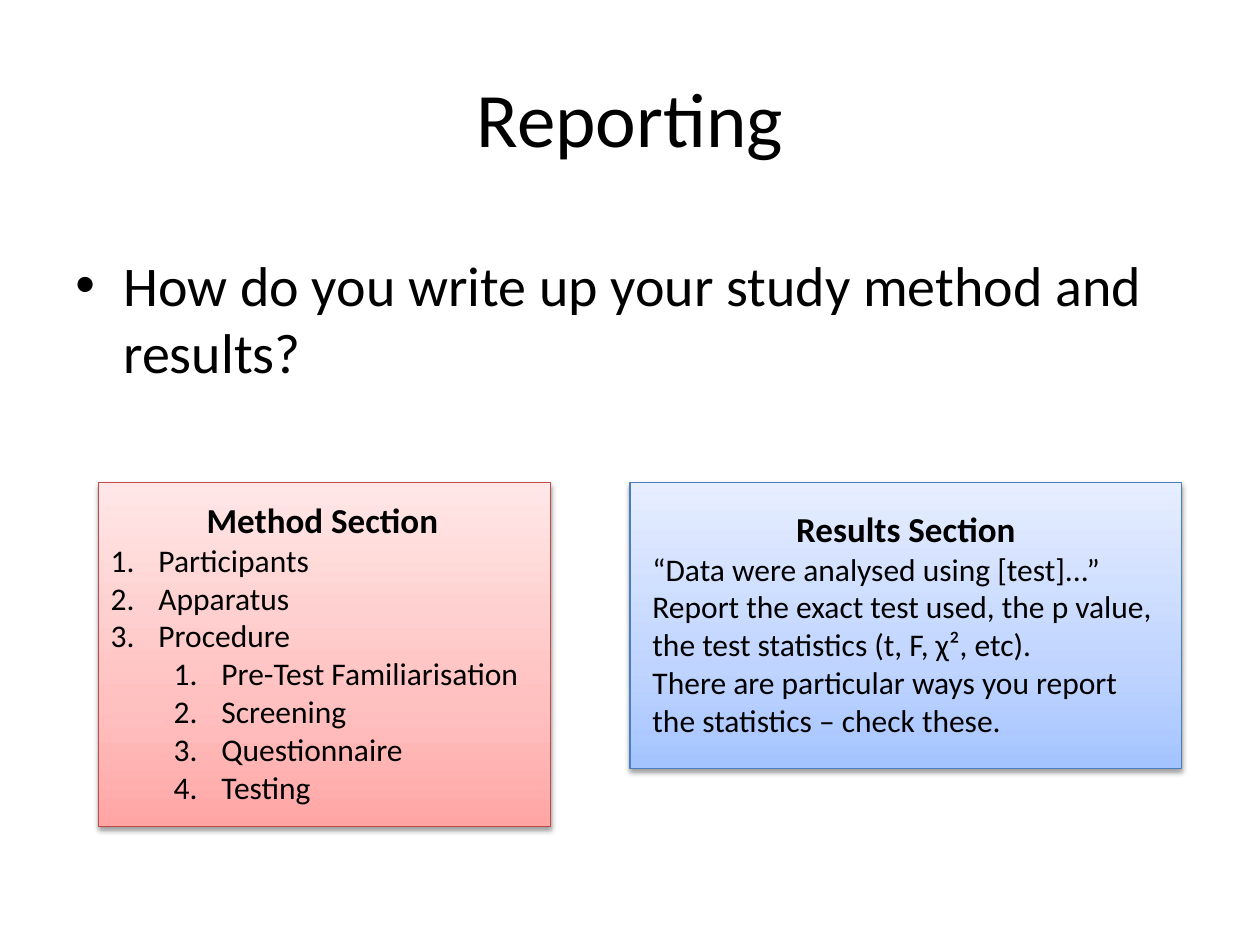
from dataclasses import dataclass

from lxml import etree
from pptx import Presentation
from pptx.dml.color import RGBColor
from pptx.enum.shapes import MSO_SHAPE
from pptx.enum.text import MSO_ANCHOR, PP_ALIGN
from pptx.oxml.ns import qn
from pptx.util import Inches, Pt

RECTANGLE = MSO_SHAPE.RECTANGLE
MIDDLE, TOP = MSO_ANCHOR.MIDDLE, MSO_ANCHOR.TOP
CENTER, LEFT = PP_ALIGN.CENTER, PP_ALIGN.LEFT

FONT = "Calibri"
BLACK = RGBColor(0x00, 0x00, 0x00)
BLUE_LINE = RGBColor(0x4B, 0x7E, 0xBC)
BLUE_STOPS = (RGBColor(0xA4, 0xC4, 0xFF), RGBColor(0xBF, 0xD4, 0xFF), RGBColor(0xE6, 0xEE, 0xFF))
RED_LINE = RGBColor(0xBF, 0x4C, 0x48)
RED_STOPS = (RGBColor(0xFF, 0xA6, 0xA5), RGBColor(0xFF, 0xC0, 0xBF), RGBColor(0xFF, 0xE7, 0xE7))
STOP_POSITIONS = (0, 35, 100)
HANGING = 0.38
LEVEL_STEP = 0.5


@dataclass(frozen=True)
class Box:
    left: float
    top: float
    width: float
    height: float

    def lengths(self) -> tuple:
        return tuple(Inches(v) for v in (self.left, self.top, self.width, self.height))


@dataclass(frozen=True)
class Line:
    text: str
    size: float = 18
    bold: bool = False
    align: PP_ALIGN = LEFT
    marker: str = ""  # a bullet character, or "1." for automatic numbers
    level: int = 0
    space_before: float = 0


@dataclass(frozen=True)
class Card:
    frame: Box
    text_box: Box
    stops: tuple[RGBColor, ...]
    outline: RGBColor
    lines: tuple[Line, ...]
    wrap: bool = True


def add_marker(paragraph, line: Line) -> None:
    """Give the paragraph a hanging bullet or number."""
    properties = paragraph._p.get_or_add_pPr()
    properties.set("marL", str(Inches(HANGING + LEVEL_STEP * line.level)))
    properties.set("indent", str(-Inches(HANGING)))
    if line.marker == "1.":
        etree.SubElement(properties, qn("a:buAutoNum"), type="arabicPeriod")
    else:
        etree.SubElement(properties, qn("a:buFont"), typeface="Arial")
        etree.SubElement(properties, qn("a:buChar"), char=line.marker)


def add_text(shapes, box: Box, lines: tuple[Line, ...], anchor=TOP, wrap: bool = True) -> None:
    frame = shapes.add_textbox(*box.lengths()).text_frame
    frame.word_wrap = wrap
    frame.vertical_anchor = anchor
    for index, line in enumerate(lines):
        paragraph = frame.add_paragraph() if index else frame.paragraphs[0]
        paragraph.alignment = line.align
        paragraph.level = line.level
        if line.space_before:
            paragraph.space_before = Pt(line.space_before)
        if line.marker:
            add_marker(paragraph, line)
        for part_index, part in enumerate(line.text.split("\n")):
            if part_index:
                paragraph.add_line_break()
            run = paragraph.add_run()
            run.text = part
            run.font.name = FONT
            run.font.size = Pt(line.size)
            run.font.bold = line.bold
            run.font.color.rgb = BLACK


def set_gradient(shape, stops: tuple[RGBColor, ...]) -> None:
    """Fill from the bottom edge up with the given colours."""
    shape.fill.gradient()
    shape.fill.gradient_angle = 90
    stop_list = shape._element.spPr.find(".//" + qn("a:gsLst"))
    for old_stop in list(stop_list):
        stop_list.remove(old_stop)
    for position, color in zip(STOP_POSITIONS, stops):
        stop = etree.SubElement(stop_list, qn("a:gs"), pos=str(position * 1000))
        etree.SubElement(stop, qn("a:srgbClr"), val=str(color))


def set_shadow(shape) -> None:
    """Cast a soft black shadow straight down."""
    shape.shadow.inherit = False
    effects = shape._element.spPr.find(qn("a:effectLst"))
    shadow = etree.SubElement(effects, qn("a:outerShdw"), blurRad=str(Pt(3.1)),
                              dist=str(Pt(1.6)), dir="5400000", rotWithShape="0")
    color = etree.SubElement(shadow, qn("a:srgbClr"), val=str(BLACK))
    etree.SubElement(color, qn("a:alpha"), val="38000")


def add_card(slide, card: Card) -> None:
    shapes = slide.shapes.add_group_shape().shapes
    panel = shapes.add_shape(RECTANGLE, *card.frame.lengths())
    set_gradient(panel, card.stops)
    panel.line.color.rgb = card.outline
    panel.line.width = Pt(0.75)
    set_shadow(panel)
    add_text(shapes, card.text_box, card.lines, wrap=card.wrap)


def heading(text: str) -> Line:
    return Line(text, size=20, bold=True, align=CENTER)


RESULTS = Card(
    Box(5, 3.83, 4.38, 2.27), Box(5.08, 3.98, 4.22, 1.95), BLUE_STOPS, BLUE_LINE,
    (
        heading("Results Section"),
        Line("“Data were analysed using [test]...”"),
        Line("Report the exact test used, the p value,\nthe test statistics (t, F, χ², etc)."),
        Line("There are particular ways you report \nthe statistics – check these."),
    ),
)
METHOD_STEPS = ("Participants", "Apparatus", "Procedure")
PROCEDURE_STEPS = ("Pre-Test Familiarisation", "Screening", "Questionnaire", "Testing")
METHOD = Card(
    Box(0.78, 3.83, 3.59, 2.73), Box(0.78, 3.91, 3.56, 2.56), RED_STOPS, RED_LINE,
    (
        heading("Method Section"),
        *(Line(step, marker="1.") for step in METHOD_STEPS),
        *(Line(step, marker="1.", level=1) for step in PROCEDURE_STEPS),
    ),
    wrap=False,
)


def main() -> None:
    presentation = Presentation()
    presentation.slide_width, presentation.slide_height = Inches(10), Inches(7.5)
    slide = presentation.slides.add_slide(presentation.slide_layouts[6])
    add_text(slide.shapes, Box(0.5, 0.3, 9, 1.25),
             (Line("Reporting", size=44, align=CENTER),), anchor=MIDDLE)
    add_text(slide.shapes, Box(0.5, 1.94, 9, 1.34),
             (Line("How do you write up your study method and results?",
                   size=32, marker="•", space_before=6.4),))
    for card in (RESULTS, METHOD):
        add_card(slide, card)
    presentation.save("out.pptx")


if __name__ == "__main__":
    main()
